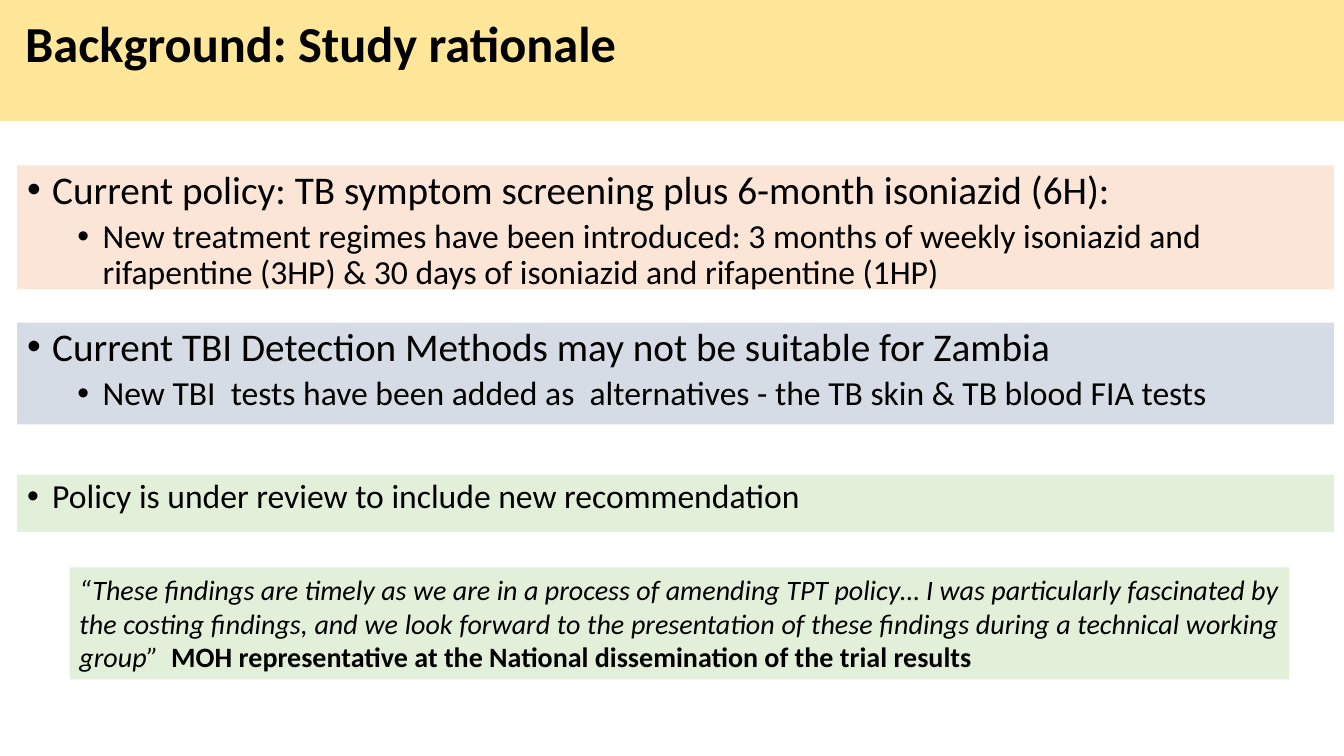
from lxml.etree import SubElement
from pptx import Presentation
from pptx.dml.color import RGBColor
from pptx.enum.shapes import MSO_SHAPE
from pptx.enum.text import MSO_ANCHOR, PP_ALIGN
from pptx.oxml.ns import qn
from pptx.util import Emu, Pt

FONT = "Calibri"
BLACK = "000000"
GREEN = "E2F0D9"
PANEL_LEFT, PANEL_WIDTH = 17, 1306

PANELS = [
    (164, 123, "FBE5D6", [
        (0, 28, "Current policy: TB symptom screening plus 6-month isoniazid (6H):"),
        (1, 24, "New treatment regimes have been introduced: 3 months of weekly "
                "isoniazid and rifapentine (3HP) & 30 days of isoniazid and "
                "rifapentine (1HP)"),
    ]),
    (320, 101, "D6DCE5", [
        (0, 28, "Current TBI Detection Methods may not be suitable for Zambia"),
        (1, 24, "New TBI  tests have been added as  alternatives - the TB skin & "
                "TB blood FIA tests"),
    ]),
    (471, 57, GREEN, [
        (0, 24, "Policy is under review to include new recommendation"),
    ]),
]
QUOTE = ("“These findings are timely as we are in a process of amending TPT policy… "
         "I was particularly fascinated by the costing findings, and we look forward "
         "to the presentation of these findings during a technical working group”  ")
SPEAKER = "MOH representative at the National dissemination of the trial results"


def px(n):
    return Emu(n * 9144)


def color(code):
    return RGBColor.from_string(code)


def style_run(r, size, bold=False, italic=False):
    r.font.name = FONT
    r.font.size = Pt(size)
    r.font.bold = bold
    r.font.italic = italic
    r.font.color.rgb = color(BLACK)


def add_box(s, left, top, width, height, fill):
    sp = s.shapes.add_shape(MSO_SHAPE.RECTANGLE, px(left), px(top), px(width), px(height))
    sp.shadow.inherit = False
    sp.fill.solid()
    sp.fill.fore_color.rgb = color(fill)
    sp.line.fill.background()
    tf = sp.text_frame
    tf.word_wrap = True
    tf.vertical_anchor = MSO_ANCHOR.TOP
    return tf


def add_title(s, text):
    sp = s.shapes.add_textbox(px(17), px(-9), px(1145), px(110))
    tf = sp.text_frame
    tf.word_wrap = True
    tf.vertical_anchor = MSO_ANCHOR.MIDDLE
    tf.margin_left = tf.margin_right = px(8)
    tf.margin_top = tf.margin_bottom = px(4)
    tf.text = text
    p = tf.paragraphs[0]
    p.line_spacing = 0.9
    style_run(p.runs[0], 36, bold=True)


def format_bullet(p, level):
    p.level = level
    p.alignment = PP_ALIGN.LEFT
    p.line_spacing = 0.9
    p.space_before = Pt(5 if level else 10)
    pPr = p._p.get_or_add_pPr()
    pPr.set("marL", str(px(25 + 50 * level)))
    pPr.set("indent", str(px(-25)))
    SubElement(pPr, qn("a:buFont"), typeface="Arial")
    SubElement(pPr, qn("a:buChar"), char="•")


def add_panel(s, top, height, fill, bullets):
    tf = add_box(s, PANEL_LEFT, top, PANEL_WIDTH, height, fill)
    tf.text = "\n".join(text for _, _, text in bullets)
    for p, (level, size, _) in zip(tf.paragraphs, bullets):
        format_bullet(p, level)
        style_run(p.runs[0], size)


def add_quote(s, quote, speaker):
    tf = add_box(s, 69, 563, 1210, 111, GREEN)
    p = tf.paragraphs[0]
    p.alignment = PP_ALIGN.JUSTIFY
    for text, bold in ((quote, False), (speaker, True)):
        r = p.add_run()
        r.text = text
        style_run(r, 20, bold=bold, italic=not bold)


def main():
    prs = Presentation()
    prs.slide_width, prs.slide_height = px(1333), px(750)
    s = prs.slides.add_slide(prs.slide_layouts[6])
    add_box(s, 0, 0, 1333, 120, "FFE699")
    add_title(s, "Background: Study rationale")
    for panel in PANELS:
        add_panel(s, *panel)
    add_quote(s, QUOTE, SPEAKER)
    prs.save("out.pptx")


if __name__ == "__main__":
    main()
